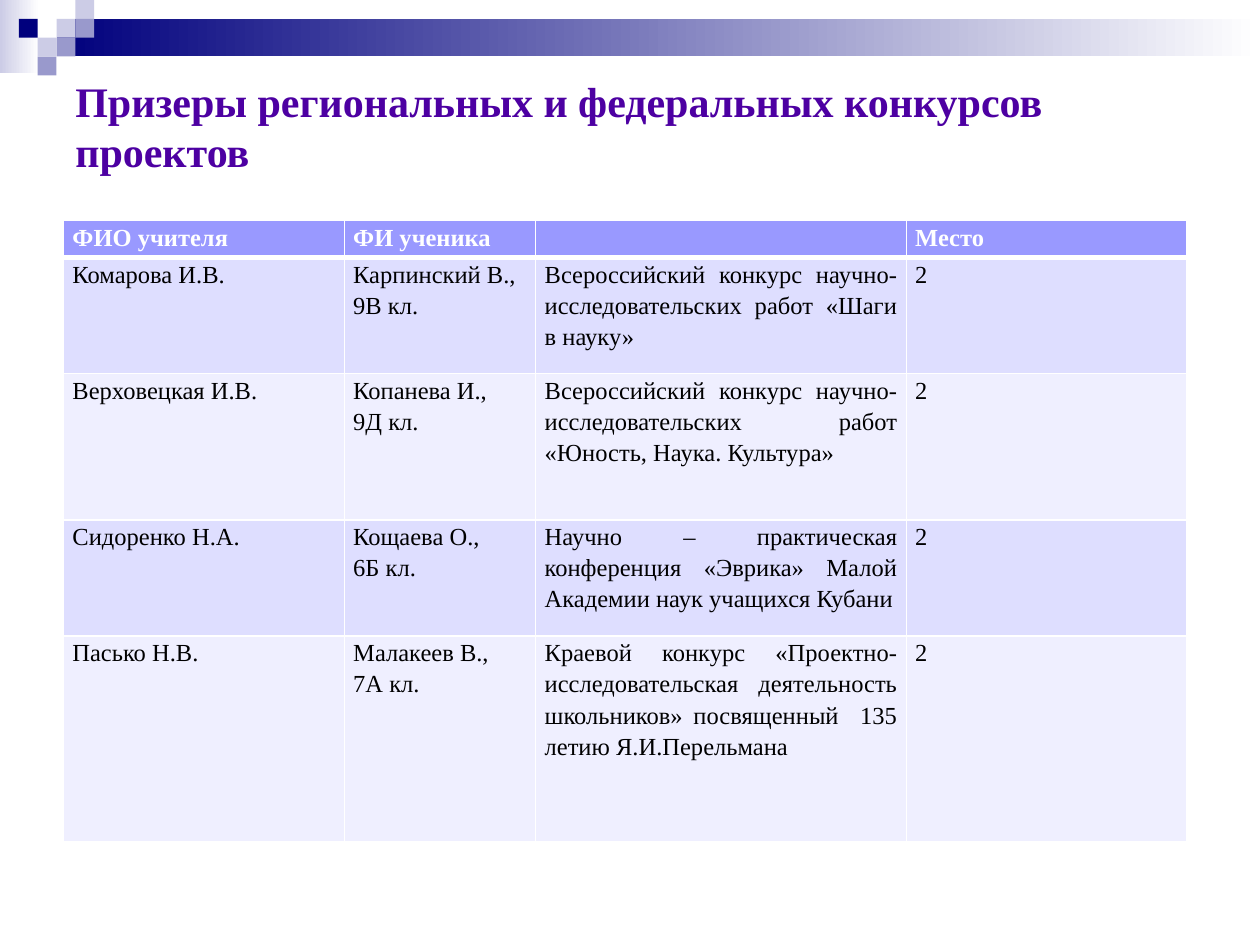
import pptx
import pptx.dml.color
import pptx.enum.shapes
import pptx.enum.text
import pptx.oxml
import pptx.oxml.ns
import pptx.util
from pptx.util import Cm

FONT = "Times New Roman"
COLORS = {
    "navy": "00007D", "pale": "CCCCE6", "lilac": "9999CC", "white": "FFFFFF",
    "title": "4D00A2", "header": "9999FF", "odd": "DEDEFF", "even": "EFEFFF",
    "text": "000000",
}
TITLE = "Призеры региональных и федеральных конкурсов проектов"
ROWS = [
    ("ФИО учителя", "ФИ ученика", "", "Место"),
    ("Комарова И.В.", "Карпинский В.,\n9В кл.",
     "Всероссийский конкурс научно-исследовательских работ «Шаги в науку»", "2"),
    ("Верховецкая И.В.", "Копанева И., \n9Д кл.",
     "Всероссийский конкурс научно-исследовательских работ «Юность, Наука. Культура»", "2"),
    ("Сидоренко Н.А.", "Кощаева О.,\n6Б кл.",
     "Научно – практическая конференция «Эврика» Малой Академии наук учащихся Кубани", "2"),
    ("Пасько Н.В.", "Малакеев В.,\n7А кл.",
     "Краевой конкурс «Проектно-исследовательская деятельность школьников» "
     "посвященный  135 летию Я.И.Перельмана", "2"),
]
COLUMN_WIDTHS = [5.66, 3.86, 7.47, 5.66]
ROW_HEIGHTS = [0.74, 2.34, 2.95, 2.34, 4.14]

SQUARE = 0.38
BANDS = [
    (0, 0, 0.79, 1.47, "pale"),
    (3 * SQUARE, SQUARE, 25.4 - 3 * SQUARE, 2 * SQUARE, "navy"),
]
MOSAIC = [
    (3, 1, "pale"), (4, 0, "pale"), (4, 1, "lilac"), (2, 2, "pale"),
    (1, 1, "navy"), (3, 2, "lilac"), (2, 3, "lilac"),
]


def rgb(name):
    return pptx.dml.color.RGBColor.from_string(COLORS[name])


def add_block(slide, left, top, width, height):
    block = slide.shapes.add_shape(
        pptx.enum.shapes.MSO_SHAPE.RECTANGLE, Cm(left), Cm(top), Cm(width), Cm(height))
    block.shadow.inherit = False
    block.line.fill.background()
    return block


def add_decoration(slide):
    for left, top, width, height, color in BANDS:
        fill = add_block(slide, left, top, width, height).fill
        fill.gradient()
        fill.gradient_angle = 0
        for stop, name in zip(fill.gradient_stops, (color, "white")):
            stop.color.rgb = rgb(name)
    for column, row, color in MOSAIC:
        fill = add_block(slide, column * SQUARE, row * SQUARE, SQUARE, SQUARE).fill
        fill.solid()
        fill.fore_color.rgb = rgb(color)


def style_font(font, size, color, bold):
    font.name = FONT
    font.size = pptx.util.Pt(size)
    font.bold = bold
    font.color.rgb = rgb(color)


def add_title(slide):
    box = slide.shapes.add_textbox(Cm(1.27), Cm(1.27), Cm(22.86), Cm(2.54))
    frame = box.text_frame
    frame.word_wrap = True
    frame.vertical_anchor = pptx.enum.text.MSO_ANCHOR.MIDDLE
    frame.text = TITLE
    style_font(frame.paragraphs[0].font, 24, "title", True)


def set_borders(cell, top, bottom):
    properties = cell._tc.get_or_add_tcPr()
    for index, (side, points) in enumerate(
            (("L", 1), ("R", 1), ("T", top), ("B", bottom))):
        properties.insert(index, pptx.oxml.parse_xml(
            f'<a:ln{side} {pptx.oxml.ns.nsdecls("a")} w="{pptx.util.Pt(points)}">'
            f'<a:solidFill><a:srgbClr val="{COLORS["white"]}"/></a:solidFill></a:ln{side}>'))


def fill_cell(cell, text, row):
    header = row == 0
    cell.text = text
    cell.margin_left = cell.margin_right = Cm(0.18)
    cell.margin_top = cell.margin_bottom = 0
    cell.fill.solid()
    cell.fill.fore_color.rgb = rgb("header" if header else "odd" if row % 2 else "even")
    set_borders(cell, 3 if row == 1 else 1, 3 if header else 1)
    for para in cell.text_frame.paragraphs:
        para.alignment = pptx.enum.text.PP_ALIGN.JUSTIFY
        para.line_spacing = 1.15
        style_font(para.font, 14, "white" if header else "text", header)


def add_winners(slide):
    table = slide.shapes.add_table(
        len(ROWS), len(COLUMN_WIDTHS), Cm(1.28), Cm(4.45),
        Cm(sum(COLUMN_WIDTHS)), Cm(sum(ROW_HEIGHTS))).table
    for column, width in zip(table.columns, COLUMN_WIDTHS):
        column.width = Cm(width)
    for row, height in zip(table.rows, ROW_HEIGHTS):
        row.height = Cm(height)
    for row, texts in enumerate(ROWS):
        for column, text in enumerate(texts):
            fill_cell(table.cell(row, column), text, row)


def main():
    deck = pptx.Presentation()
    deck.slide_width, deck.slide_height = Cm(25.4), Cm(19.05)
    slide = deck.slides.add_slide(deck.slide_layouts[6])
    add_decoration(slide)
    add_title(slide)
    add_winners(slide)
    deck.save("out.pptx")


if __name__ == "__main__":
    main()
